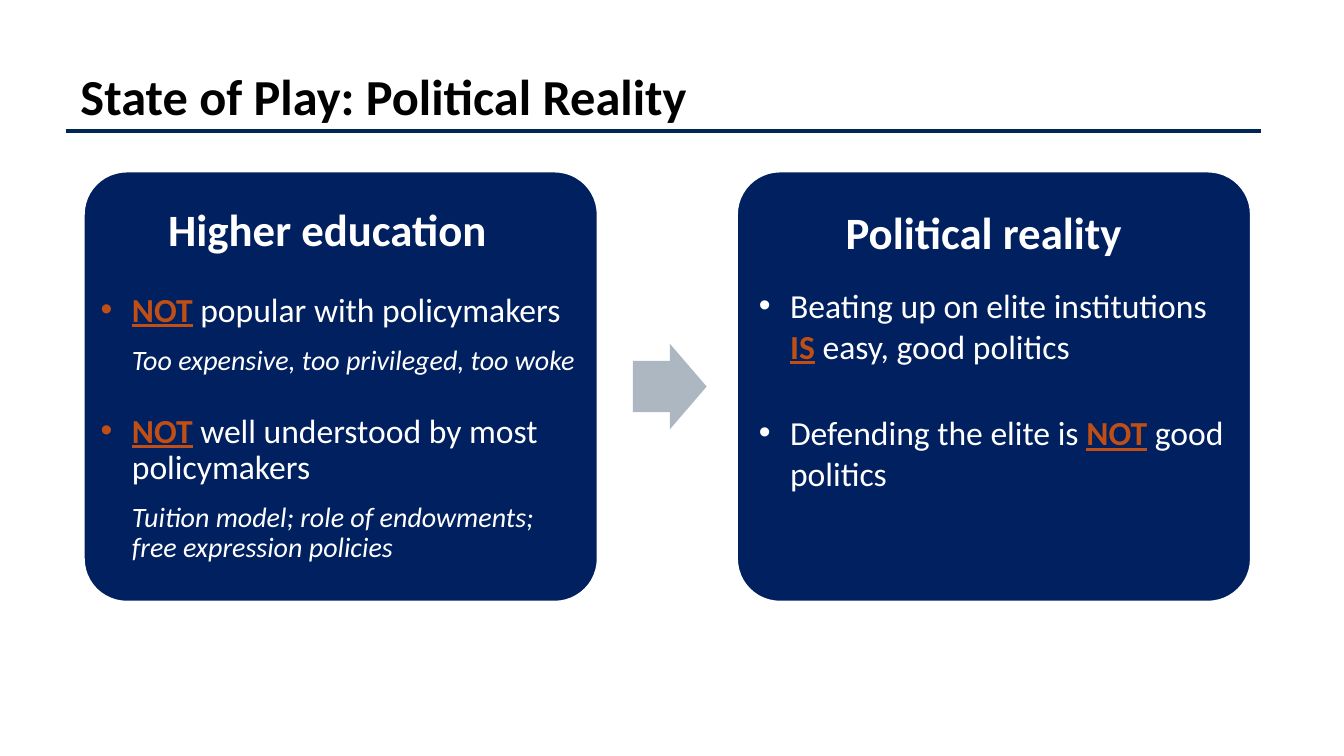
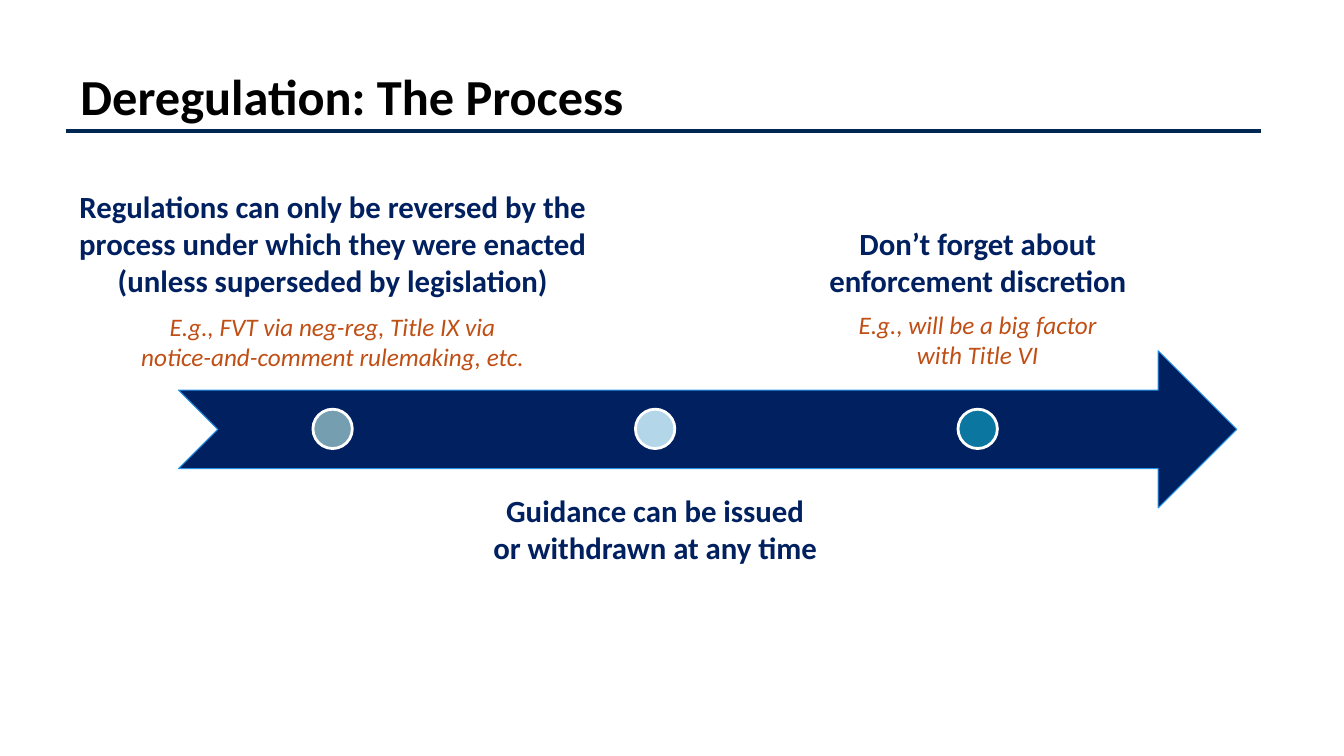
"""Build two slides on political reality and the deregulation process."""
import pptx
import pptx.dml.color
import pptx.enum.shapes
import pptx.enum.text
import pptx.util
from lxml import etree
from pptx.oxml.ns import qn

RGBColor = pptx.dml.color.RGBColor
SHAPES = pptx.enum.shapes.MSO_SHAPE
ALIGN = pptx.enum.text.PP_ALIGN
ANCHOR = pptx.enum.text.MSO_ANCHOR

NAVY = RGBColor(0x00, 0x20, 0x60)
RULE_NAVY = RGBColor(0x00, 0x26, 0x54)
ORANGE = RGBColor(0xC0, 0x4F, 0x15)
GREY = RGBColor(0xAC, 0xB7, 0xC1)
EDGE_BLUE = RGBColor(0x28, 0x93, 0xE6)
WHITE = RGBColor(0xFF, 0xFF, 0xFF)
BLACK = RGBColor(0x00, 0x00, 0x00)
FONT = "Calibri"

WIDTH = pptx.util.Inches(13.333)
HEIGHT = pptx.util.Inches(7.5)

# Places are left, top, width, height in percent of the slide; *word* is stressed.
TITLE_PLACE = (5.25, 8, 88.5, 9.33)
RULE_LEFT, RULE_RIGHT, RULE_TOP = 4.88, 93.83, 17.33

REALITY_TITLE = "State of Play: Political Reality"
CARD_LEFT, CARD_STEP = 6.23, 48.6
CARD_TOP, CARD_WIDTH, CARD_HEIGHT = 22.67, 38.25, 56.93
CARD_ARROW = (47.1, 45.47, 5.48, 11.33)
CARDS = [
    {
        "heading": ("Higher education", (11.25, 26.8, 26.78, 7.6), 0.07),
        "spacing": {"line": 0.9, "after": 12},
        "points": [
            ("*NOT* popular with policymakers",
             "Too expensive, too privileged, too woke",
             (6.23, 38.13, 38.63, 14.8)),
            ("*NOT* well understood by most policymakers",
             "Tuition model; role of endowments; free expression policies",
             (6.23, 54.13, 36.15, 19.6)),
        ],
    },
    {
        "heading": ("Political reality", (62.18, 26.4, 23.03, 8.53), 0),
        "spacing": {},
        "points": [
            ("Beating up on elite institutions *IS* easy, good politics", None,
             (55.2, 37.07, 37.05, 12.13)),
            ("Defending the elite is *NOT* good politics", None,
             (55.2, 53.87, 41.03, 12.13)),
        ],
    },
]

PROCESS_TITLE = "Deregulation: The Process"
TIMELINE = (13.28, 46.4, 78.75, 20.8)
STAGE_CENTRE, STAGE_STEP = 24.75, 24
DOT_TOP, DOT_WIDTH, DOT_HEIGHT = 54.13, 2.93, 5.2
STAGES = [
    {
        "dot": RGBColor(0x75, 0x9E, 0xB1),
        "caption": ("Regulations can only be reversed by the process under which "
                    "they were enacted (unless superseded by legislation)",
                    24.13, 39.98, 16.13),
        "example": ("E.g., FVT via neg-reg, Title IX via "
                    "notice-and-comment rulemaking, etc.", 40.53, 30.98, 9.47),
    },
    {
        "dot": RGBColor(0xB3, 0xD6, 0xE8),
        "caption": ("Guidance can be issued or withdrawn at any time",
                    64.4, 25.95, 11.2),
    },
    {
        "dot": RGBColor(0x0B, 0x76, 0xA0),
        "caption": ("Don’t forget about enforcement discretion",
                    29.07, 23.85, 11.2),
        "example": ("E.g., will be a big factor with Title VI",
                    40.27, 19.5, 9.47),
    },
]
STAGE_STYLES = {
    "caption": {"size": 22, "color": NAVY, "bold": True},
    "example": {"size": 18, "color": ORANGE, "italic": True},
}


def across(share):
    return round(WIDTH * share / 100)


def down(share):
    return round(HEIGHT * share / 100)


def box(place):
    left, top, width, height = place
    return across(left), down(top), across(width), down(height)


def text_frame(slide, place, anchor=ANCHOR.TOP):
    frame = slide.shapes.add_textbox(*box(place)).text_frame
    frame.word_wrap = True
    frame.vertical_anchor = anchor
    return frame


def write(paragraph, text, *, size, color, bold=False, italic=False, align=ALIGN.LEFT,
          indent=0, bullet=False, line=None, after=0):
    properties = paragraph._p.get_or_add_pPr()
    properties.set("marL", str(pptx.util.Inches(indent)))
    properties.set("indent", str(pptx.util.Inches(-0.31 if bullet else 0)))
    if bullet:
        etree.SubElement(properties, qn("a:buFont"), typeface="Arial")
        etree.SubElement(properties, qn("a:buChar"), char="•")
    paragraph.alignment = align
    paragraph.space_after = pptx.util.Pt(after)
    if line:
        paragraph.line_spacing = line
    for position, piece in enumerate(text.split("*")):
        if not piece:
            continue
        stressed = position % 2 == 1
        run = paragraph.add_run()
        run.text = piece
        run.font.name = FONT
        run.font.size = pptx.util.Pt(size)
        run.font.bold = bold or stressed
        run.font.italic = italic
        run.font.underline = stressed
        run.font.color.rgb = ORANGE if stressed else color


def add_figure(slide, preset, place, fill, edge=None, edge_width=0):
    figure = slide.shapes.add_shape(preset, *box(place))
    figure.shadow.inherit = False
    figure.fill.solid()
    figure.fill.fore_color.rgb = fill
    if edge is None:
        figure.line.fill.background()
    else:
        figure.line.color.rgb = edge
        figure.line.width = pptx.util.Pt(edge_width)
    return figure


def add_titled_slide(deck, title):
    slide = deck.slides.add_slide(deck.slide_layouts[6])
    heading = text_frame(slide, TITLE_PLACE, ANCHOR.MIDDLE)
    write(heading.paragraphs[0], title, size=36, color=BLACK, bold=True)
    rule = slide.shapes.add_connector(
        pptx.enum.shapes.MSO_CONNECTOR.STRAIGHT,
        across(RULE_LEFT), down(RULE_TOP), across(RULE_RIGHT), down(RULE_TOP))
    rule.line.color.rgb = RULE_NAVY
    rule.line.width = pptx.util.Pt(3)
    etree.SubElement(rule._element.spPr, qn("a:effectLst"))
    return slide


def build_reality(deck):
    slide = add_titled_slide(deck, REALITY_TITLE)
    for number, content in enumerate(CARDS):
        place = (CARD_LEFT + number * CARD_STEP, CARD_TOP, CARD_WIDTH, CARD_HEIGHT)
        card = add_figure(slide, SHAPES.ROUNDED_RECTANGLE, place, NAVY, WHITE, 1.5)
        card.adjustments[0] = 0.1
        spacing = content["spacing"]
        heading, heading_place, indent = content["heading"]
        write(text_frame(slide, heading_place).paragraphs[0], heading,
              size=32, color=WHITE, bold=True, indent=indent, **spacing)
        for point, detail, point_place in content["points"]:
            frame = text_frame(slide, point_place)
            write(frame.paragraphs[0], point, size=24, color=WHITE,
                  indent=0.38, bullet=True, **spacing)
            if detail:
                write(frame.add_paragraph(), detail, size=20, color=WHITE,
                      italic=True, indent=0.38, **spacing)
    arrow = add_figure(slide, SHAPES.RIGHT_ARROW, CARD_ARROW, GREY)
    arrow.adjustments[0] = 0.6


def build_process(deck):
    slide = add_titled_slide(deck, PROCESS_TITLE)
    add_figure(slide, SHAPES.NOTCHED_RIGHT_ARROW, TIMELINE, NAVY, EDGE_BLUE, 0.75)
    for number, stage in enumerate(STAGES):
        centre = STAGE_CENTRE + number * STAGE_STEP
        dot_place = (centre - DOT_WIDTH / 2, DOT_TOP, DOT_WIDTH, DOT_HEIGHT)
        add_figure(slide, SHAPES.OVAL, dot_place, stage["dot"], WHITE, 2)
        for part, style in STAGE_STYLES.items():
            if part in stage:
                words, top, width, height = stage[part]
                frame = text_frame(slide, (centre - width / 2, top, width, height))
                write(frame.paragraphs[0], words, align=ALIGN.CENTER, **style)


def main():
    deck = pptx.Presentation()
    deck.slide_width, deck.slide_height = WIDTH, HEIGHT
    build_reality(deck)
    build_process(deck)
    deck.save("out.pptx")


if __name__ == "__main__":
    main()
